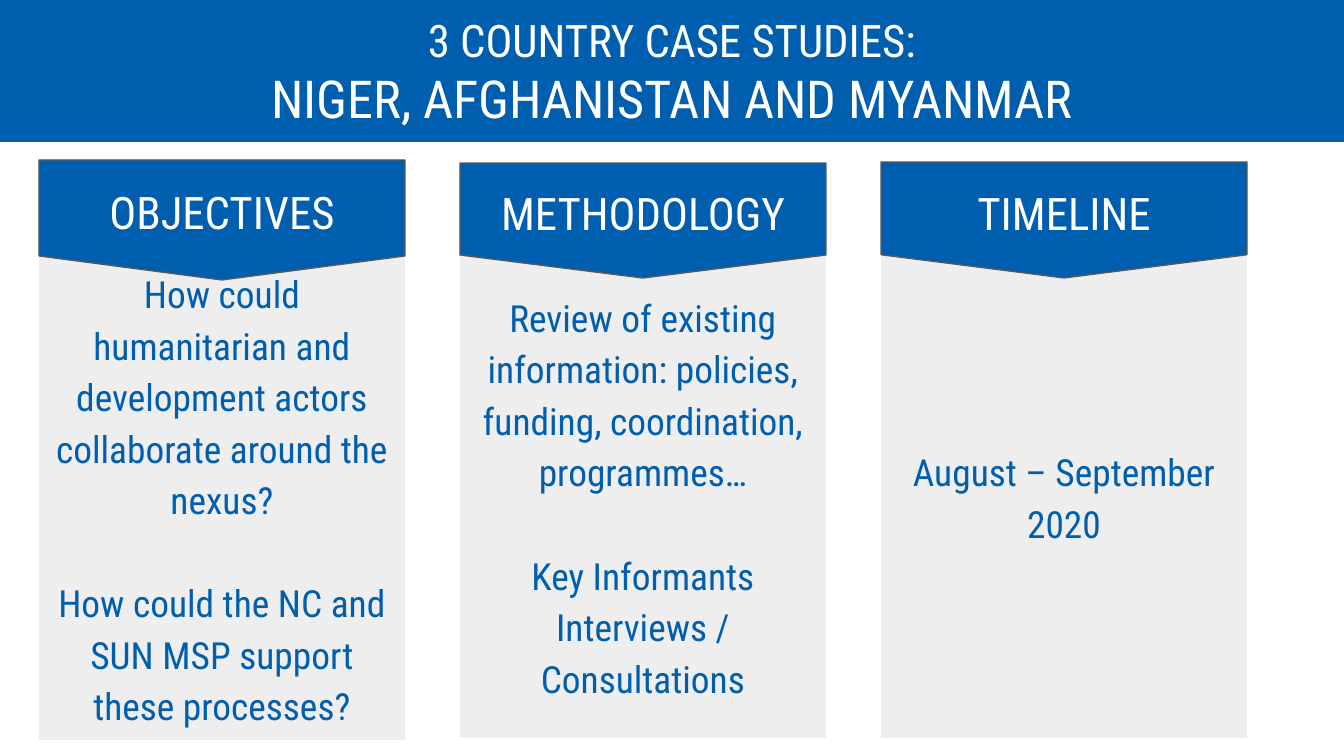
import dataclasses

import pptx
import pptx.dml.color
import pptx.enum.shapes
import pptx.enum.text
import pptx.util

EMU_PER_PX = 914400 / 134.4
SLIDE_WIDTH, SLIDE_HEIGHT = 1344, 756
COLUMN_LEFT, COLUMN_STEP, COLUMN_WIDTH = 39, 421, 366
PANEL_HEIGHT = 487
INSET = 13


@dataclasses.dataclass(frozen=True)
class Theme:
    font: str = "Roboto Condensed"
    blue: str = "005EAE"
    grey: str = "EEEEEE"
    outline: str = "595959"
    white: str = "FFFFFF"
    body_size: float = 20
    heading_size: float = 24
    title_size: float = 28
    line_spacing: float = 1.15
    paragraph_gap: float = 27.6
    outline_width: float = 0.75


THEME = Theme()
COLUMNS = [
    {
        "heading": "OBJECTIVES",
        "body": [
            "How could humanitarian and development actors collaborate around the nexus?",
            "How could the NC and SUN MSP support these processes?",
        ],
        "panel_top": 253,
        "badge_top": 160,
        "badge_height": 120,
    },
    {
        "heading": "METHODOLOGY",
        "body": [
            "Review of existing information: policies, funding, coordination, programmes…",
            "Key Informants Interviews / Consultations",
        ],
        "panel_top": 251,
        "badge_top": 163,
        "badge_height": 115,
    },
    {
        "heading": "TIMELINE",
        "body": ["August – September 2020"],
        "panel_top": 251,
        "badge_top": 162,
        "badge_height": 116,
    },
]


def px(length):
    return pptx.util.Emu(round(length * EMU_PER_PX))


def rgb(color):
    return pptx.dml.color.RGBColor.from_string(color)


def add_block(slide, kind, left, top, width, height, fill, outline=None):
    block = slide.shapes.add_shape(kind, px(left), px(top), px(width), px(height))
    block.shadow.inherit = False
    block.fill.solid()
    block.fill.fore_color.rgb = rgb(fill)
    if outline:
        block.line.color.rgb = rgb(outline)
        block.line.width = pptx.util.Pt(THEME.outline_width)
    else:
        block.line.fill.background()
    frame = block.text_frame
    frame.word_wrap = True
    frame.vertical_anchor = pptx.enum.text.MSO_ANCHOR.MIDDLE
    frame.margin_left = frame.margin_right = px(INSET)
    frame.margin_top = frame.margin_bottom = px(INSET)
    return frame


def write_text(frame, text, *, size, color, first=True, spacing=1.0, before=0):
    paragraph = frame.paragraphs[0] if first else frame.add_paragraph()
    paragraph.alignment = pptx.enum.text.PP_ALIGN.CENTER
    paragraph.line_spacing = spacing
    paragraph.space_before = pptx.util.Pt(before)
    run = paragraph.add_run()
    run.text = text
    run.font.name = THEME.font
    run.font.size = pptx.util.Pt(size)
    run.font.color.rgb = rgb(color)


def add_panel(slide, left, column):
    panel = add_block(
        slide, pptx.enum.shapes.MSO_SHAPE.RECTANGLE,
        left, column["panel_top"], COLUMN_WIDTH, PANEL_HEIGHT, THEME.grey,
    )
    for index, text in enumerate(column["body"]):
        write_text(
            panel, text, size=THEME.body_size, color=THEME.blue, first=index == 0,
            spacing=THEME.line_spacing, before=THEME.paragraph_gap if index else 0,
        )


def add_badge(slide, left, column):
    badge = add_block(
        slide, pptx.enum.shapes.MSO_SHAPE.FLOWCHART_OFFPAGE_CONNECTOR,
        left, column["badge_top"], COLUMN_WIDTH, column["badge_height"],
        THEME.blue, THEME.outline,
    )
    write_text(
        badge, column["heading"], size=THEME.heading_size, color=THEME.white,
        spacing=THEME.line_spacing,
    )


def add_banner(slide):
    banner = add_block(
        slide, pptx.enum.shapes.MSO_SHAPE.RECTANGLE, 0, 0, SLIDE_WIDTH, 142, THEME.blue,
    )
    write_text(banner, "3 COUNTRY CASE STUDIES:", size=THEME.heading_size, color=THEME.white)
    write_text(
        banner, "NIGER, AFGHANISTAN AND MYANMAR",
        size=THEME.title_size, color=THEME.white, first=False,
    )


def main():
    deck = pptx.Presentation()
    deck.slide_width, deck.slide_height = px(SLIDE_WIDTH), px(SLIDE_HEIGHT)
    slide = deck.slides.add_slide(deck.slide_layouts[6])
    add_banner(slide)
    for index, column in enumerate(COLUMNS):
        left = COLUMN_LEFT + index * COLUMN_STEP
        add_panel(slide, left, column)
        add_badge(slide, left, column)
    deck.save("out.pptx")


if __name__ == "__main__":
    main()
